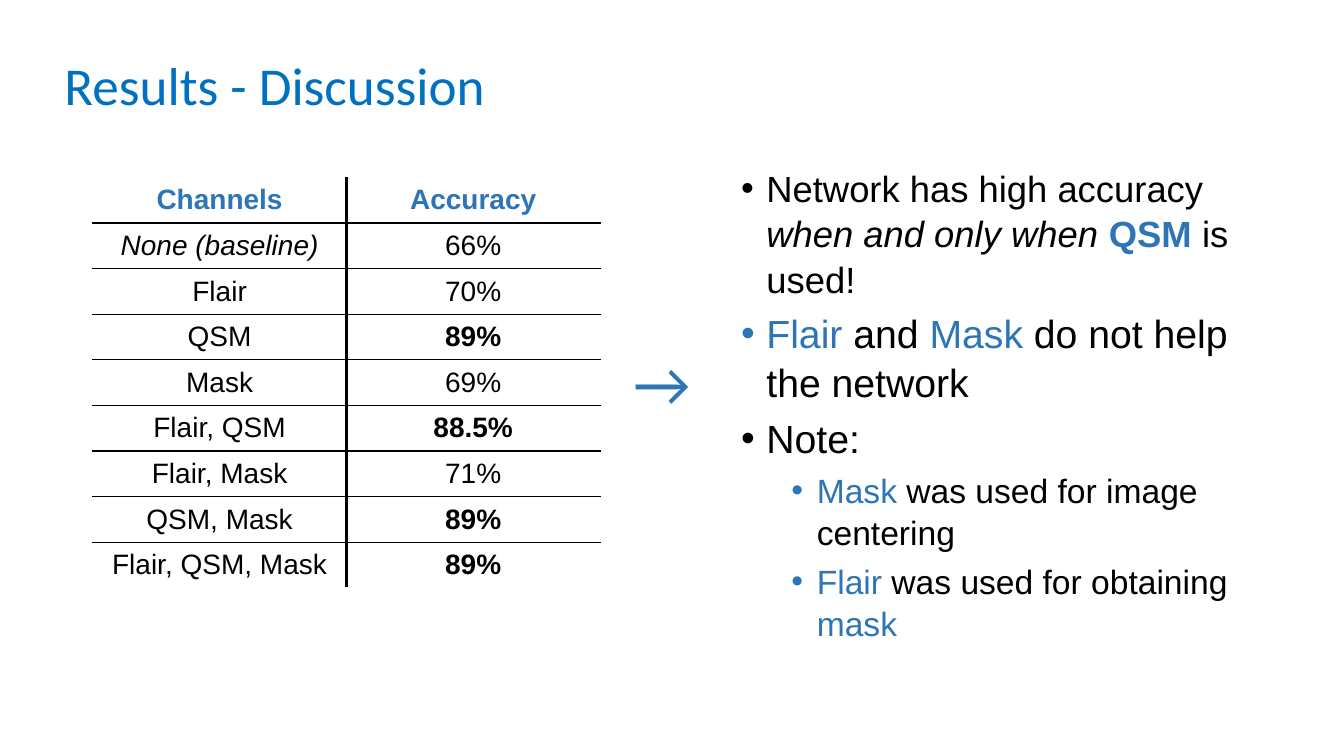
from lxml.etree import SubElement
from pptx import Presentation
from pptx.dml.color import RGBColor
from pptx.enum.text import MSO_ANCHOR as Anchor, MSO_AUTO_SIZE as AutoSize, PP_ALIGN as Align
from pptx.oxml.ns import qn
from pptx.util import Cm, Pt

BLACK = RGBColor(0x00, 0x00, 0x00)
BLUE = RGBColor(0x2E, 0x75, 0xB6)
TITLE_BLUE = RGBColor(0x00, 0x70, 0xC0)


def add_text(paragraph, text, size, color=BLACK, face="Arial", **formats):
    run = paragraph.add_run()
    run.text = text
    run.font.color.rgb = color
    for name, value in {"size": Pt(size), "name": face, **formats}.items():
        setattr(run.font, name, value)


def add_border(cell, side, width):
    line = SubElement(cell._tc.get_or_add_tcPr(), qn(f"a:ln{side}"), w=str(Pt(width)))
    fill = SubElement(line, qn("a:solidFill"))
    SubElement(fill, qn("a:srgbClr"), val=str(BLACK))


deck = Presentation()
deck.slide_width, deck.slide_height = Cm(33.87), Cm(19.05)
slide = deck.slides.add_slide(deck.slide_layouts[1])
heading, findings = slide.placeholders

# Title
heading.left, heading.top, heading.width, heading.height = Cm(1.37), Cm(1.02), Cm(30.18), Cm(2.41)
heading.text_frame.vertical_anchor = Anchor.MIDDLE
heading.text_frame.auto_size = AutoSize.NONE
title_line = heading.text_frame.paragraphs[0]
title_line.alignment = Align.LEFT
title_line.line_spacing = 0.9
add_text(title_line, "Results - Discussion", 38, TITLE_BLUE, "Calibri")

# Accuracy by input channels
HEADER = {"color": BLUE, "bold": True}
BEST = {"bold": True}
results = [
    ("Channels", HEADER, "Accuracy", HEADER),
    ("None (baseline)", {"italic": True}, "66%", {}),
    ("Flair", {}, "70%", {}),
    ("QSM", {}, "89%", BEST),
    ("Mask", {}, "69%", {}),
    ("Flair, QSM", {}, "88.5%", BEST),
    ("Flair, Mask", {}, "71%", {}),
    ("QSM, Mask", {}, "89%", BEST),
    ("Flair, QSM, Mask", {}, "89%", BEST),
]
row_height, column_width = Cm(1.15), Cm(6.39)
last = len(results) - 1
accuracy = slide.shapes.add_table(len(results), 2, Cm(2.34), Cm(4.47),
                                  2 * column_width, len(results) * row_height).table
accuracy.first_row = accuracy.horz_banding = False
for column in accuracy.columns:
    column.width = column_width
for r, (channels, channel_format, score, score_format) in enumerate(results):
    accuracy.rows[r].height = row_height
    for c, (text, formats) in enumerate([(channels, channel_format), (score, score_format)]):
        cell = accuracy.cell(r, c)
        cell.vertical_anchor = Anchor.MIDDLE
        add_border(cell, "L" if c else "R", 2.25)
        if r > 0:
            add_border(cell, "T", 2.25 if r == 1 else 1)
        if r < last:
            add_border(cell, "B", 2.25 if r == 0 else 1)
        cell.fill.background()
        entry = cell.text_frame.paragraphs[0]
        entry.alignment = Align.CENTER
        add_text(entry, text, 20, **{"bold": False, **formats})

# Arrow from results to findings
arrow = slide.shapes.add_textbox(Cm(15.48), Cm(8.61), Cm(2.4), Cm(2)).text_frame
arrow.word_wrap = True
arrow.vertical_anchor = Anchor.MIDDLE
arrow.paragraphs[0].alignment = Align.CENTER
add_text(arrow.paragraphs[0], "→", 45, BLUE, "Calibri")

# Findings
findings.left, findings.top, findings.width, findings.height = Cm(18.42), Cm(4.01), Cm(13.11), Cm(13.16)
findings.text_frame.auto_size = AutoSize.NONE
points = [
    (0, 26, [("Network has high accuracy ", {}), ("when and only when ", {"italic": True}),
             ("QSM ", HEADER), ("is used!", {})]),
    (0, 28, [("Flair", {"color": BLUE}), (" and ", {}), ("Mask", {"color": BLUE}),
             (" do not help the network", {})]),
    (0, 28, [("Note:", {})]),
    (1, 24, [("Mask", {"color": BLUE}), (" was used for image centering", {})]),
    (1, 24, [("Flair", {"color": BLUE}), (" was used for obtaining ", {}), ("mask", {"color": BLUE})]),
]
for i, (level, size, pieces) in enumerate(points):
    point = findings.text_frame.add_paragraph() if i else findings.text_frame.paragraphs[0]
    for name, value in {"level": level, "space_before": Pt(5), "line_spacing": 1.04}.items():
        setattr(point, name, value)
    properties = point._p.get_or_add_pPr()
    properties.set("marL", str(Cm(0.64 + 1.27 * level)))
    properties.set("indent", str(-Cm(0.64)))
    SubElement(properties, qn("a:buFont"), typeface="Arial")
    SubElement(properties, qn("a:buChar"), char="•")
    for text, formats in pieces:
        add_text(point, text, size, **formats)

deck.save("out.pptx")
